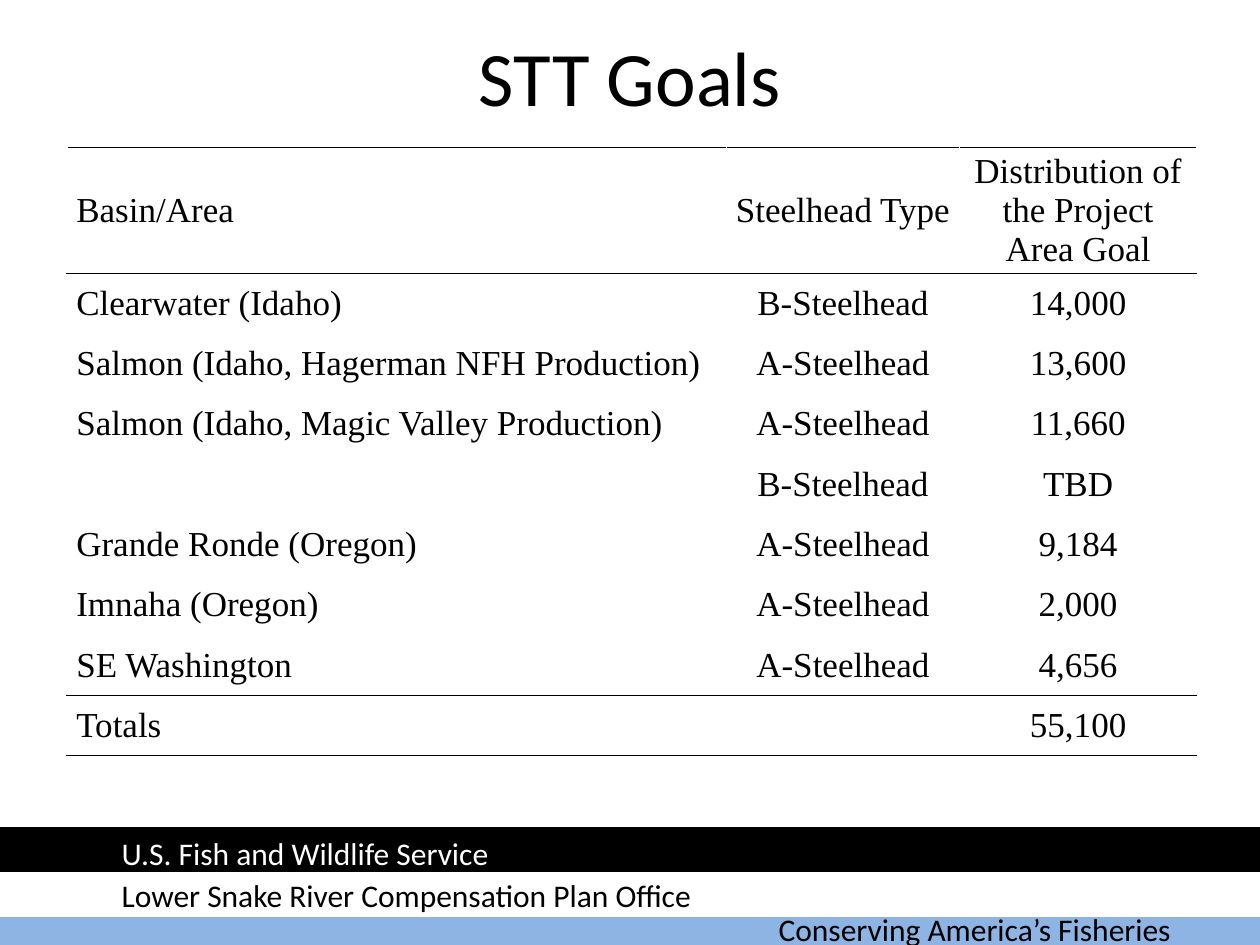
from dataclasses import dataclass

import pptx
import pptx.dml.color
import pptx.enum.shapes
import pptx.enum.text
import pptx.oxml
import pptx.oxml.ns
import pptx.util

Pt = pptx.util.Pt
ALIGN = pptx.enum.text.PP_ALIGN
MIDDLE = pptx.enum.text.MSO_ANCHOR.MIDDLE
BLACK, WHITE, BLUE = "000000", "FFFFFF", "8EB4E3"


@dataclass
class Band:
    left: float
    top: float
    color: str


@dataclass
class Label:
    text: str
    left: float
    top: float
    width: float
    height: float = 29
    size: float = 18
    color: str = BLACK
    align: ALIGN = ALIGN.LEFT


BANDS = [Band(-0.7, 516.2, BLUE), Band(0, 499, WHITE), Band(0, 473.8, BLACK)]

LABELS = [
    Label("Conserving America’s Fisheries", 437.8, 516.2, 264),
    Label("U.S. Fish and Wildlife Service", 62.4, 473, 300, color=WHITE),
    Label("Lower Snake River Compensation Plan Office", 62.4, 496.8, 358),
    Label("STT Goals", 36, 12, 648, 63, size=44, align=ALIGN.CENTER),
]

GOALS = [
    ("Basin/Area", "Steelhead Type", "Distribution of the Project Area Goal"),
    ("Clearwater (Idaho)", "B-Steelhead", "14,000"),
    ("Salmon (Idaho, Hagerman NFH Production)", "A-Steelhead", "13,600"),
    ("Salmon (Idaho, Magic Valley Production)", "A-Steelhead", "11,660"),
    ("", "B-Steelhead", "TBD"),
    ("Grande Ronde (Oregon)", "A-Steelhead", "9,184"),
    ("Imnaha (Oregon)", "A-Steelhead", "2,000"),
    ("SE Washington", "A-Steelhead", "4,656"),
    ("Totals", "", "55,100"),
]
COLUMN_WIDTHS = (376.9, 133.2, 135.6)
HEADER_HEIGHT, ROW_HEIGHT = 66.5, 34.45
TOTALS = len(GOALS) - 1
# Rows with a rule above or below
RULES = {"lnT": {0, 1, TOTALS}, "lnB": {0, TOTALS - 1, TOTALS}}


def rgb(color: str) -> pptx.dml.color.RGBColor:
    return pptx.dml.color.RGBColor.from_string(color)


def style_text(paragraph, font_name: str, size: float, color: str, align: ALIGN) -> None:
    paragraph.alignment = align
    for run in paragraph.runs:
        run.font.name = font_name
        run.font.size = Pt(size)
        run.font.color.rgb = rgb(color)


def draw_band(slide, band: Band) -> None:
    bar = slide.shapes.add_shape(
        pptx.enum.shapes.MSO_SHAPE.RECTANGLE,
        Pt(band.left), Pt(band.top), Pt(720), Pt(23.8))
    bar.shadow.inherit = False
    bar.fill.solid()
    bar.fill.fore_color.rgb = rgb(band.color)
    bar.line.color.rgb = rgb(band.color)
    bar.line.width = Pt(2)


def draw_label(slide, label: Label) -> None:
    frame = slide.shapes.add_textbox(
        Pt(label.left), Pt(label.top), Pt(label.width), Pt(label.height)).text_frame
    frame.word_wrap = True
    frame.vertical_anchor = MIDDLE
    frame.text = label.text
    style_text(frame.paragraphs[0], "Calibri", label.size, label.color, label.align)


def add_rule(cell, edge: str) -> None:
    cell._tc.get_or_add_tcPr().append(pptx.oxml.parse_xml(
        f'<a:{edge} {pptx.oxml.ns.nsdecls("a")} w="{Pt(1)}"><a:solidFill>'
        f'<a:srgbClr val="{BLACK}"/></a:solidFill></a:{edge}>'))


def draw_goals(slide) -> None:
    height = HEADER_HEIGHT + TOTALS * ROW_HEIGHT
    goals = slide.shapes.add_table(
        len(GOALS), len(COLUMN_WIDTHS),
        Pt(38.2), Pt(84.2), Pt(sum(COLUMN_WIDTHS)), Pt(height)).table
    goals.first_row = goals.horz_banding = False
    for column, width in zip(goals.columns, COLUMN_WIDTHS):
        column.width = Pt(width)
    for r, values in enumerate(GOALS):
        goals.rows[r].height = Pt(ROW_HEIGHT if r else HEADER_HEIGHT)
        for c, value in enumerate(values):
            cell = goals.cell(r, c)
            cell.margin_left = cell.margin_right = Pt(5.4)
            cell.margin_top = cell.margin_bottom = 0
            cell.vertical_anchor = MIDDLE
            for edge, ruled_rows in RULES.items():
                if r in ruled_rows:
                    add_rule(cell, edge)
            cell.fill.background()
            cell.text_frame.text = value
            style_text(cell.text_frame.paragraphs[0], "Times New Roman", 20, BLACK,
                       ALIGN.CENTER if c else ALIGN.LEFT)


def main() -> None:
    deck = pptx.Presentation()
    deck.slide_width, deck.slide_height = Pt(720), Pt(540)
    slide = deck.slides.add_slide(deck.slide_layouts[6])
    # Footer bands
    for band in BANDS:
        draw_band(slide, band)
    # Footer wording and title
    for label in LABELS:
        draw_label(slide, label)
    # Goals by basin
    draw_goals(slide)
    deck.save("out.pptx")


if __name__ == "__main__":
    main()
